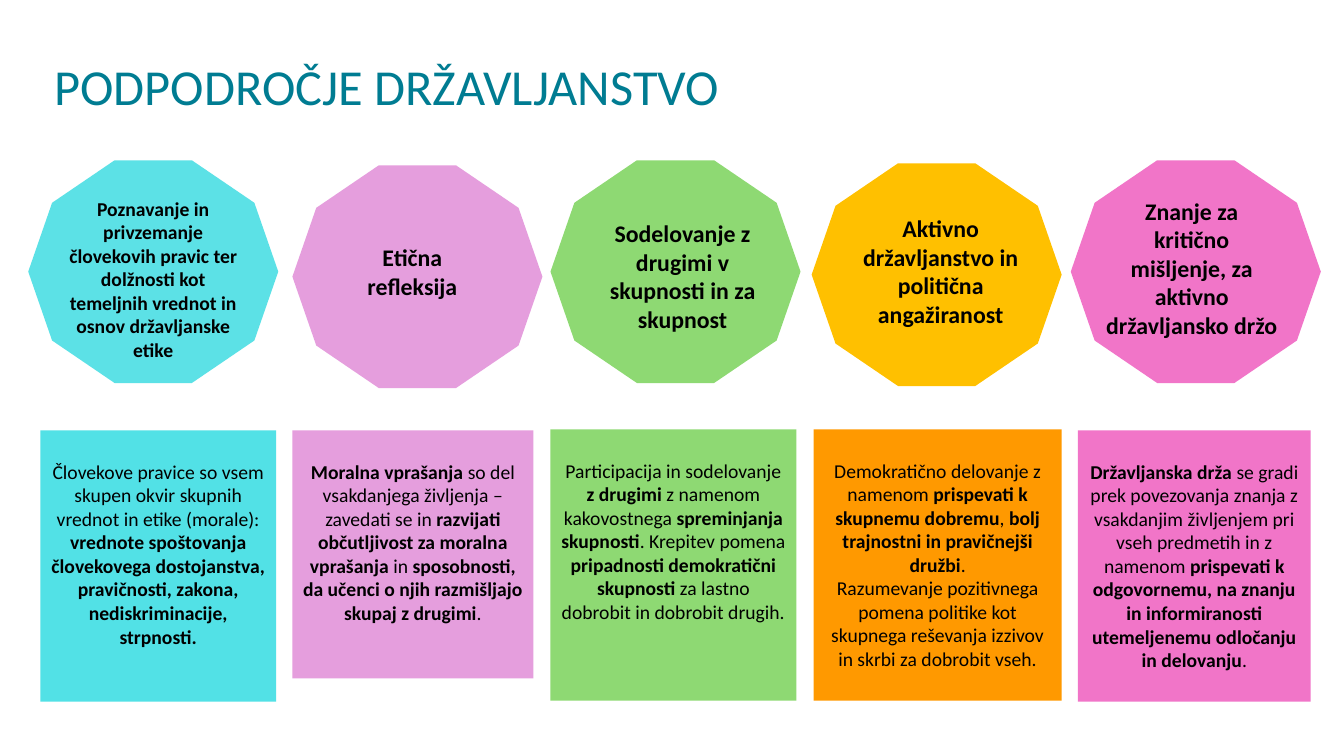
import pptx
import pptx.util
import pptx.dml.color
import pptx.enum.shapes
import pptx.enum.text

theme = {
    "font": "Calibri", "title": "007C92", "text": "000000",
    "aqua": "5CE1E6", "cyan": "52E1E6", "lilac": "E59EDD", "green": "8ED973",
    "gold": "FFC000", "orange": "FF9900", "pink": "F175C8",
    "head": 36, "large": 17, "small": 14,
}
cell = pptx.util.Inches(0.1)
kinds = pptx.enum.shapes.MSO_SHAPE
align = pptx.enum.text.PP_ALIGN
anchor = pptx.enum.text.MSO_ANCHOR


def write(frame, text, size, color="text", side=align.CENTER, hold=anchor.TOP, lead=1.0):
    frame.word_wrap = True
    frame.auto_size = pptx.enum.text.MSO_AUTO_SIZE.NONE
    frame.vertical_anchor = hold
    for row, line in enumerate(text.split("\n")):
        para = frame.add_paragraph() if row else frame.paragraphs[0]
        para.alignment = side
        para.line_spacing = lead
        for turn, part in enumerate(line.split("*")):
            if part:
                run = para.add_run()
                run.text = part
                run.font.name = theme["font"]
                run.font.size = pptx.util.Pt(theme[size])
                run.font.bold = turn % 2 == 1
                run.font.color.rgb = pptx.dml.color.RGBColor.from_string(theme[color])


def draw(kind, box, fill):
    shape = slide.shapes.add_shape(kind, *[round(part * cell) for part in box])
    shape.shadow.inherit = False
    shape.fill.solid()
    shape.fill.fore_color.rgb = pptx.dml.color.RGBColor.from_string(theme[fill])
    shape.line.fill.background()
    return shape


deck = pptx.Presentation()
deck.slide_width = round(133.3 * cell)
deck.slide_height = 75 * cell
slide = deck.slides.add_slide(deck.slide_layouts[5])

title = slide.shapes.title
title.left, title.top, title.width, title.height = [
    round(part * cell) for part in (4.4, 1.6, 115, 14.5)]
write(title.text_frame, "PODPODROČJE DRŽAVLJANSTVO", "head", color="title",
      side=align.LEFT, hold=anchor.MIDDLE, lead=0.9)

topics = [
    ("aqua", 2.8, 15.9, (5.6, 19, 19.2, 17.5), "small",
     "*Poznavanje in privzemanje človekovih pravic ter dolžnosti kot temeljnih "
     "vrednot in osnov državljanske etike*"),
    ("lilac", 29, 16.4, (32.3, 23.6, 17.2, 6.8), "large", "*Etična refleksija*"),
    ("green", 54.6, 15.9, (58.1, 21.2, 19.2, 12.5), "large",
     "*Sodelovanje z drugimi v skupnosti in za skupnost*"),
    ("gold", 80.5, 16.2, (83.7, 20.7, 19.2, 12.5), "large",
     "*Aktivno državljanstvo in politična angažiranost*"),
    ("pink", 106.2, 15.9, (108.6, 19, 19.2, 15.4), "large",
     "*Znanje za kritično mišljenje, za aktivno državljansko držo*"),
]
for fill, left, top, box, size, text in topics:
    draw(kinds.DECAGON, (left, top, 24.8, 22.1), fill)
    label = slide.shapes.add_textbox(*[round(part * cell) for part in box])
    write(label.text_frame, text, size)

cards = [
    ("cyan", (4, 42.7, 23.4, 26.9),
     "Človekove pravice so vsem skupen okvir skupnih vrednot in etike (morale): "
     "*vrednote spoštovanja človekovega dostojanstva, pravičnosti, zakona, "
     "nediskriminacije, strpnosti.*"),
    ("lilac", (29, 42.7, 23.9, 24.6),
     "*Moralna vprašanja *so del vsakdanjega življenja – zavedati se in "
     "*razvijati občutljivost za moralna vprašanja *in *sposobnosti, da učenci "
     "o njih razmišljajo skupaj z drugimi*."),
    ("green", (54.6, 42.6, 24.4, 26.9),
     "Participacija in sodelovanje *z drugimi *z namenom kakovostnega "
     "*spreminjanja skupnosti*. Krepitev pomena *pripadnosti demokratični "
     "skupnosti *za lastno dobrobit in dobrobit drugih."),
    ("orange", (80.7, 42.6, 24.6, 26.9),
     "Demokratično delovanje z namenom *prispevati k skupnemu dobremu*, "
     "*bolj trajnostni in pravičnejši družbi*.\n"
     "Razumevanje pozitivnega pomena politike kot skupnega reševanja izzivov "
     "in skrbi za dobrobit vseh."),
    ("pink", (106.9, 42.7, 23.1, 26.9),
     "*Državljanska drža *se gradi prek povezovanja znanja z vsakdanjim "
     "življenjem pri vseh predmetih in z namenom *prispevati k odgovornemu, na "
     "znanju in informiranosti utemeljenemu odločanju in delovanju*."),
]
for fill, box, text in cards:
    card = draw(kinds.RECTANGLE, box, fill)
    card.text_frame.margin_top = round(2.9 * cell)
    write(card.text_frame, text, "small")

deck.save("out.pptx")
